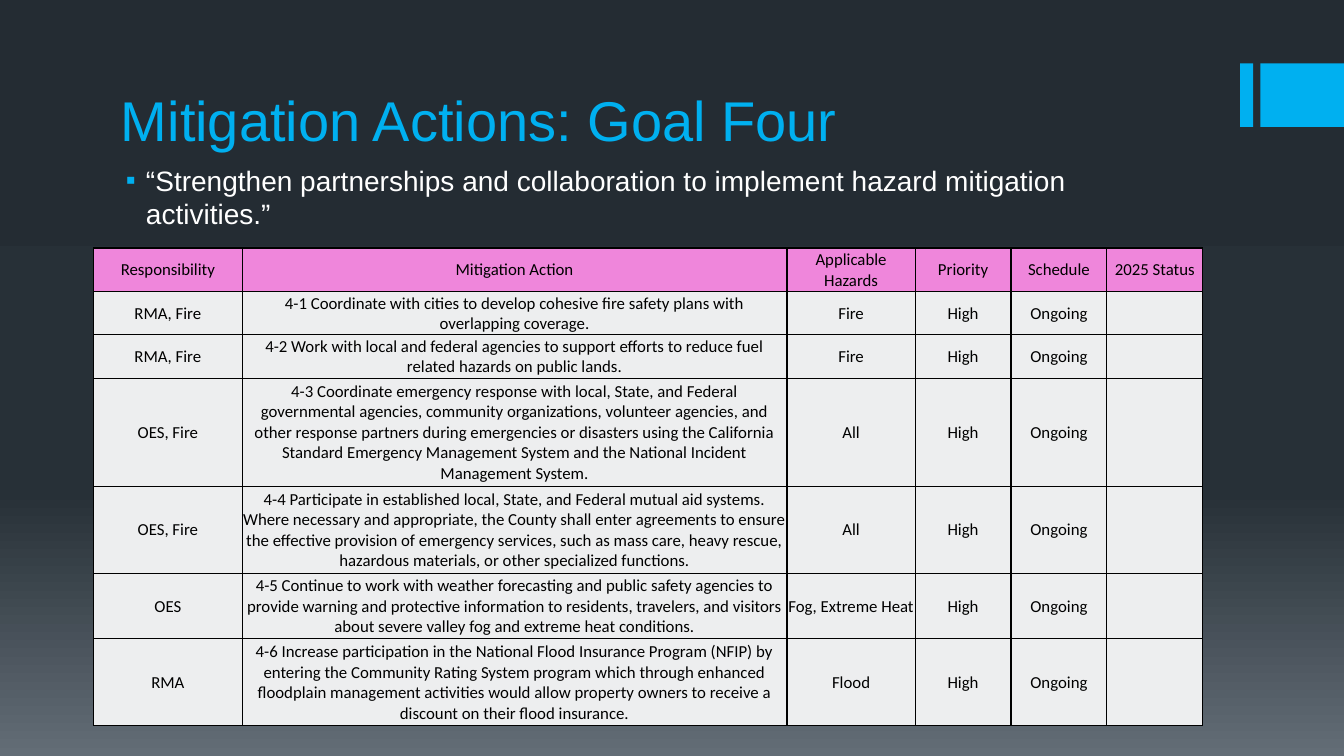
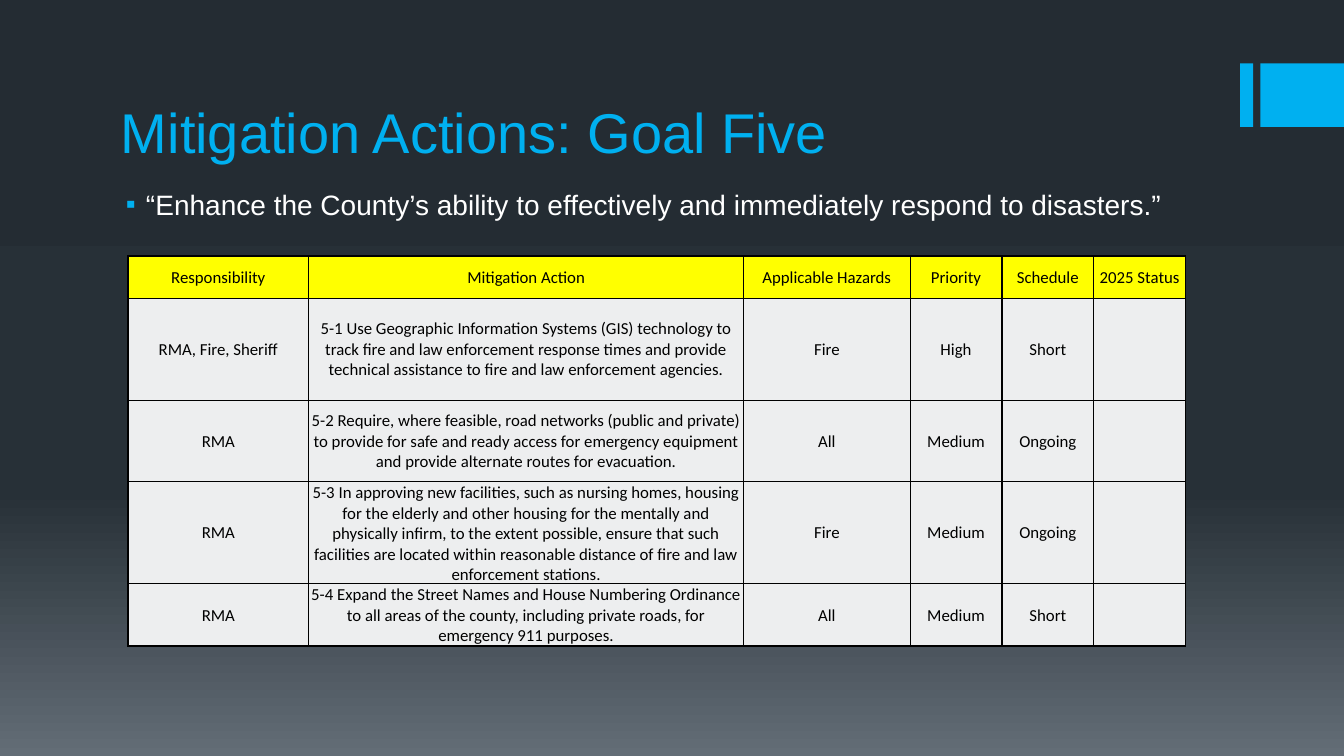
from copy import deepcopy

from lxml import etree
from pptx import Presentation
from pptx import util as u
from pptx.dml.color import RGBColor
from pptx.enum import shapes, text
from pptx.oxml.ns import qn

WIDTH, HEIGHT = 13.33, 7.5
COLORS = {
    "accent": "00B0F0", "white": "FFFFFF", "black": "000000", "cell": "EDEEEF",
    "pink": "EF86DB", "yellow": "FFFF00",
    "sky": "242C33", "dusk": "273037", "haze": "636D76",
}
BACKGROUND_STOPS = [(0, "sky"), (0.65, "dusk"), (1, "haze")]
TEXT_LEFT, TEXT_WIDTH = 1.1, 10.67
TITLE_HEIGHT, BODY_HEIGHT = 1.26, 3.87
BAND_TOP, BAND_HEIGHT = 0.63, 0.63
BANDS = [(12.3, 0.13), (12.5, WIDTH - 12.5)]
HEADERS = ["Responsibility", "Mitigation Action", "Applicable Hazards",
           "Priority", "Schedule", "2025 Status"]

GOALS = [
    {
        "title": "Mitigation Actions: Goal Four", "title_top": 0.31,
        "statement": "“Strengthen partnerships and collaboration to implement "
                     "hazard mitigation activities.”",
        "statement_top": 1.57,
        "header": "pink",
        "box": (0.93, 2.46, 11, 4.74),
        "columns": [1.47, 5.4, 1.27, 0.95, 0.95, 0.95],
        "rows": [0.43, 0.43, 0.43, 1.07, 0.86, 0.65, 0.86],
        "actions": [
            ["RMA, Fire", "4-1 Coordinate with cities to develop cohesive fire safety "
             "plans with overlapping coverage.", "Fire", "High", "Ongoing"],
            ["RMA, Fire", "4-2 Work with local and federal agencies to support efforts "
             "to reduce fuel related hazards on public lands.",
             "Fire", "High", "Ongoing"],
            ["OES, Fire", "4-3 Coordinate emergency response with local, State, and "
             "Federal governmental agencies, community organizations, volunteer "
             "agencies, and other response partners during emergencies or disasters "
             "using the California Standard Emergency Management System and the "
             "National Incident Management System.", "All", "High", "Ongoing"],
            ["OES, Fire", "4-4 Participate in established local, State, and Federal "
             "mutual aid systems. Where necessary and appropriate, the County shall "
             "enter agreements to ensure the effective provision of emergency "
             "services, such as mass care, heavy rescue, hazardous materials, or "
             "other specialized functions.", "All", "High", "Ongoing"],
            ["OES", "4-5 Continue to work with weather forecasting and public safety "
             "agencies to provide warning and protective information to residents, "
             "travelers, and visitors about severe valley fog and extreme heat "
             "conditions.", "Fog, Extreme Heat", "High", "Ongoing"],
            ["RMA", "4-6 Increase participation in the National Flood Insurance "
             "Program (NFIP) by entering the Community Rating System program which "
             "through enhanced floodplain management activities would allow property "
             "owners to receive a discount on their flood insurance.",
             "Flood", "High", "Ongoing"],
        ],
    },
    {
        "title": "Mitigation Actions: Goal Five", "title_top": 0.42,
        "statement": "“Enhance the County’s ability to effectively and immediately "
                     "respond to disasters.”",
        "statement_top": 1.81,
        "header": "yellow",
        "box": (1.27, 2.54, 10.49, 3.87),
        "columns": [1.79, 4.31, 1.65, 0.91, 0.91, 0.91],
        "rows": [0.42, 1.01, 0.81, 1.01, 0.62],
        "actions": [
            ["RMA, Fire, Sheriff", "5-1 Use Geographic Information Systems (GIS) "
             "technology to track fire and law enforcement response times and provide "
             "technical assistance to fire and law enforcement agencies.",
             "Fire", "High", "Short"],
            ["RMA", "5-2 Require, where feasible, road networks (public and private) "
             "to provide for safe and ready access for emergency equipment and "
             "provide alternate routes for evacuation.", "All", "Medium", "Ongoing"],
            ["RMA", "5-3 In approving new facilities, such as nursing homes, housing "
             "for the elderly and other housing for the mentally and physically "
             "infirm, to the extent possible, ensure that such facilities are located "
             "within reasonable distance of fire and law enforcement stations.",
             "Fire", "Medium", "Ongoing"],
            ["RMA", "5-4 Expand the Street Names and House Numbering Ordinance to all "
             "areas of the county, including private roads, for emergency 911 "
             "purposes.", "All", "Medium", "Short"],
        ],
    },
]


def color(name):
    return RGBColor.from_string(COLORS[name])


def add_run(paragraph, words, size, font, color_name):
    run = paragraph.add_run()
    run.text = words
    run.font.size = u.Pt(size)
    run.font.name = font
    run.font.color.rgb = color(color_name)


# Shared look
def set_background(master):
    fill = master.background.fill
    fill.gradient()
    fill.gradient_angle = 270
    stop_list = master.element.find(".//" + qn("a:gsLst"))
    stop_list.insert(1, deepcopy(stop_list[0]))
    for stop, (position, name) in zip(fill.gradient_stops, BACKGROUND_STOPS):
        stop.position = position
        stop.color.rgb = color(name)


def add_bands(slide):
    for left, width in BANDS:
        band = slide.shapes.add_shape(
            shapes.MSO_SHAPE.RECTANGLE, u.Inches(left), u.Inches(BAND_TOP),
            u.Inches(width), u.Inches(BAND_HEIGHT))
        band.shadow.inherit = False
        band.fill.solid()
        band.fill.fore_color.rgb = color("accent")
        band.line.fill.background()


# Title and goal statement
def place_title(slide, words, top):
    title = slide.shapes.title
    title.left, title.top = u.Inches(TEXT_LEFT), u.Inches(top)
    title.width, title.height = u.Inches(TEXT_WIDTH), u.Inches(TITLE_HEIGHT)
    frame = title.text_frame
    frame.word_wrap = True
    frame.auto_size = text.MSO_AUTO_SIZE.NONE
    frame.vertical_anchor = text.MSO_ANCHOR.BOTTOM
    paragraph = frame.paragraphs[0]
    paragraph.alignment = text.PP_ALIGN.LEFT
    add_run(paragraph, words, 40, "Arial", "accent")


def add_bullet(paragraph, indent, hanging):
    properties = paragraph._p.get_or_add_pPr()
    properties.set("marL", str(u.Inches(indent)))
    properties.set("indent", str(-u.Inches(hanging)))
    bullet_color = etree.SubElement(properties, qn("a:buClr"))
    etree.SubElement(bullet_color, qn("a:srgbClr"), val=COLORS["accent"])
    etree.SubElement(properties, qn("a:buFont"), typeface="Arial")
    etree.SubElement(properties, qn("a:buChar"), char="▪")


def add_statement(slide, words, top):
    box = slide.shapes.add_textbox(u.Inches(TEXT_LEFT), u.Inches(top),
                                   u.Inches(TEXT_WIDTH), u.Inches(BODY_HEIGHT))
    box.text_frame.word_wrap = True
    paragraph = box.text_frame.paragraphs[0]
    paragraph.space_before = u.Pt(4)
    add_bullet(paragraph, 0.25, 0.2)
    add_run(paragraph, words, 20, "Arial", "white")


# Action table
def add_borders(cell):
    properties = cell._tc.get_or_add_tcPr()
    for index, side in enumerate(("a:lnL", "a:lnR", "a:lnT", "a:lnB")):
        line = etree.Element(qn(side), w=str(u.Pt(1)))
        fill = etree.SubElement(line, qn("a:solidFill"))
        etree.SubElement(fill, qn("a:srgbClr"), val=COLORS["black"])
        properties.insert(index, line)


def format_cell(cell, words, fill_name):
    cell.fill.solid()
    cell.fill.fore_color.rgb = color(fill_name)
    add_borders(cell)
    cell.vertical_anchor = text.MSO_ANCHOR.MIDDLE
    cell.margin_left = cell.margin_right = cell.margin_top = u.Inches(0.01)
    cell.margin_bottom = 0
    if words:
        paragraph = cell.text_frame.paragraphs[0]
        paragraph.alignment = text.PP_ALIGN.CENTER
        add_run(paragraph, words, 12, "Calibri", "black")


def add_action_table(slide, box, columns, rows, header_fill, actions):
    left, top, width, height = map(u.Inches, box)
    table = slide.shapes.add_table(len(rows), len(columns),
                                   left, top, width, height).table
    table.first_row = table.horz_banding = False
    for column, share in zip(table.columns, columns):
        column.width = round(width * share / sum(columns))
    for row, share in zip(table.rows, rows):
        row.height = round(height * share / sum(rows))
    for row_index, values in enumerate([HEADERS] + [row + [""] for row in actions]):
        for column_index, words in enumerate(values):
            format_cell(table.cell(row_index, column_index), words,
                        "cell" if row_index else header_fill)


def build_goal_slide(presentation, goal):
    slide = presentation.slides.add_slide(presentation.slide_layouts[5])
    add_bands(slide)
    place_title(slide, goal["title"], goal["title_top"])
    add_statement(slide, goal["statement"], goal["statement_top"])
    add_action_table(slide, goal["box"], goal["columns"], goal["rows"],
                     goal["header"], goal["actions"])


def main():
    presentation = Presentation()
    presentation.slide_width = u.Inches(WIDTH)
    presentation.slide_height = u.Inches(HEIGHT)
    set_background(presentation.slide_master)
    for goal in GOALS:
        build_goal_slide(presentation, goal)
    presentation.save("out.pptx")


if __name__ == "__main__":
    main()
